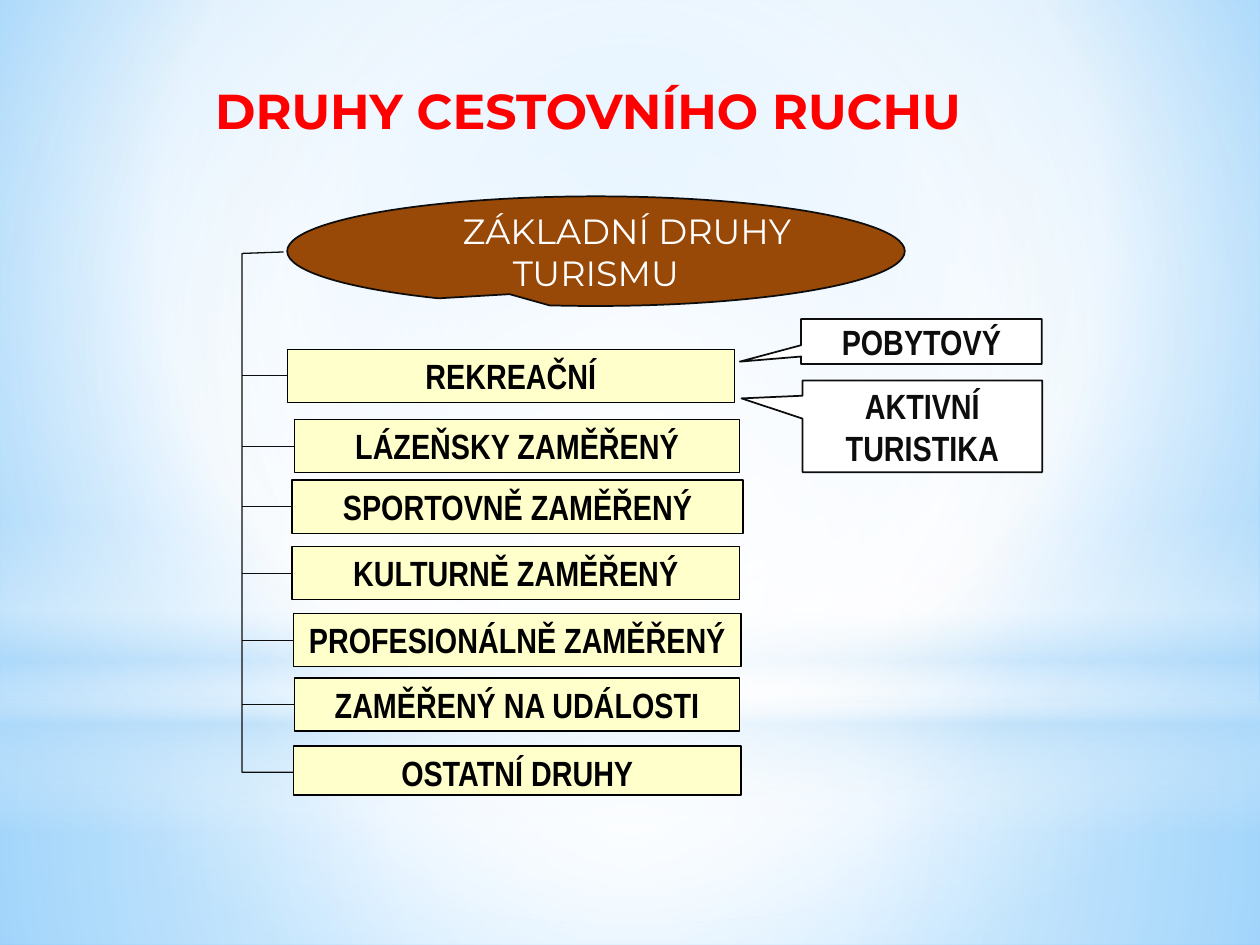
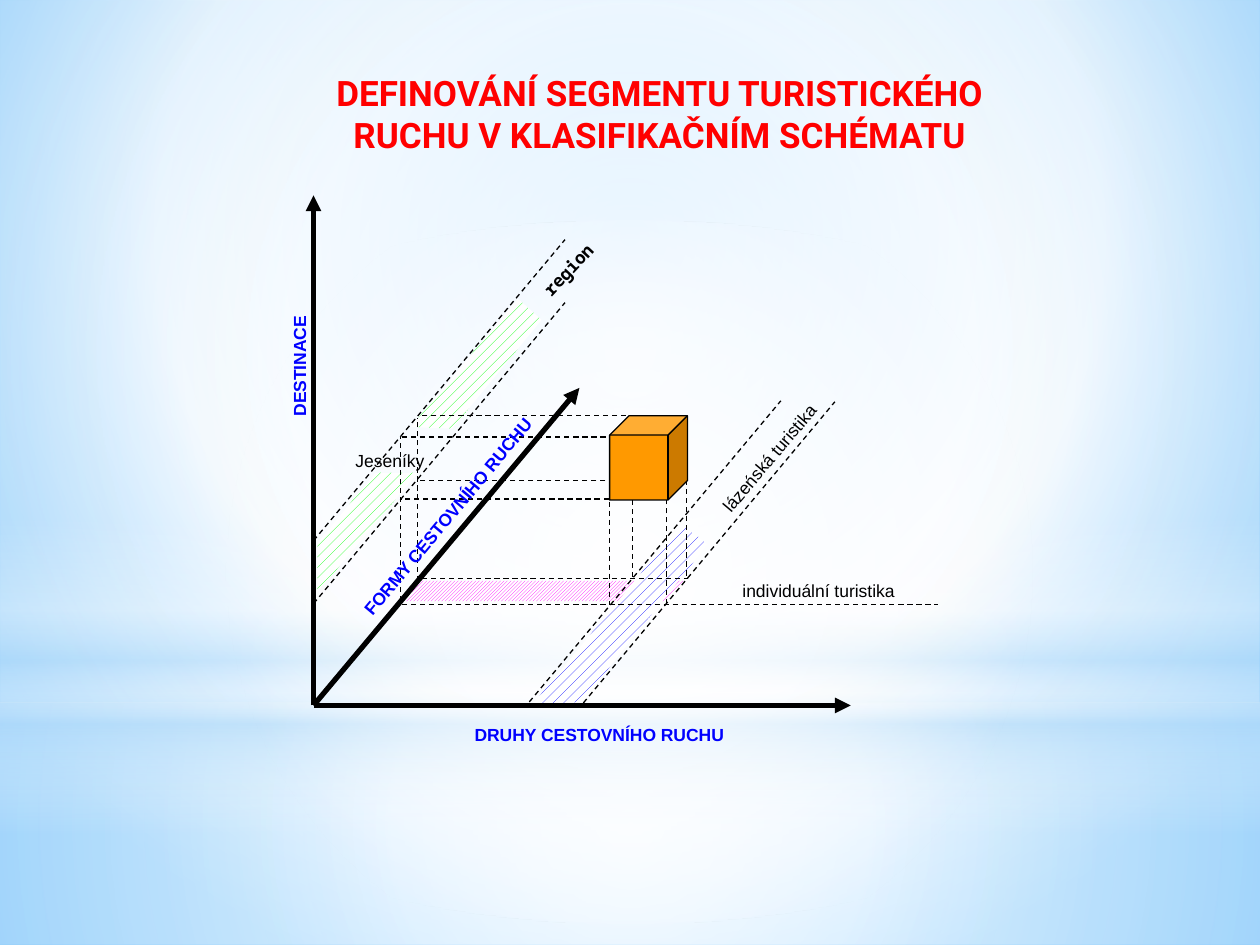
"""Two slides on the kinds and the segments of tourism."""
from dataclasses import dataclass

from lxml.etree import SubElement
from pptx import Presentation
from pptx.dml.color import RGBColor as Rgb
from pptx.enum.dml import MSO_LINE_DASH_STYLE as Dash, MSO_PATTERN_TYPE as Hatch
from pptx.enum.shapes import MSO_CONNECTOR as Link, MSO_SHAPE as Kind
from pptx.enum.text import MSO_ANCHOR as Anchor, PP_ALIGN as Align
from pptx.oxml.ns import qn
from pptx.util import Cm, Pt


@dataclass(frozen=True)
class Theme:
    wide: float = 25.4
    high: float = 19.05
    red: str = "FF0000"
    brown: str = "984807"
    cream: str = "FFFFCC"
    white: str = "FFFFFF"
    black: str = "000000"
    ink: str = "0D0D0D"
    blue: str = "0000FF"
    green: str = "00FF00"
    pink: str = "FF00FF"
    amber: str = "FF9900"
    sky: str = "B4DCFA"
    head: int = 28
    body: int = 20
    label: int = 10
    gap: int = 6
    thin: float = 0.75
    edge: float = 1
    thick: float = 3
    narrow: str = "Arial Narrow"
    plain: str = "Arial"
    mono: str = "Noto Sans Mono"
    title: str = "Montserrat"
    second: str = "Roboto"


T = Theme()
CENTRE = (50, 50, 50, 50)


def color(code):
    return Rgb.from_string(code)


def cms(*sizes):
    return [Cm(size) for size in sizes]


def blend(props, stops, focus=None):
    """Swap the solid fill in props for a gradient, radial if focus is given."""
    solid = props.find(qn("a:solidFill"))
    grad = props.makeelement(qn("a:gradFill"), {"rotWithShape": "1"})
    props.replace(solid, grad)
    group = SubElement(grad, qn("a:gsLst"))
    for place, code, alpha in stops:
        stop = SubElement(group, qn("a:gs"), pos=str(place * 1000))
        tint = SubElement(stop, qn("a:srgbClr"), val=code)
        if alpha < 100:
            SubElement(tint, qn("a:alpha"), val=str(alpha * 1000))
    if focus is None:
        SubElement(grad, qn("a:lin"), ang="5400000", scaled="0")
        return
    track = SubElement(grad, qn("a:path"), {"path": "circle"})
    sides = {side: str(part * 1000) for side, part in zip("ltrb", focus)}
    SubElement(track, qn("a:fillToRect"), sides)


def add_form(slide, kind, area, fill, line=None, width=T.thin, adjust=()):
    form = slide.shapes.add_shape(kind, *cms(*area))
    form.shadow.inherit = False
    form.fill.solid()
    form.fill.fore_color.rgb = color(fill)
    if line:
        form.line.color.rgb = color(line)
        form.line.width = Pt(width)
    else:
        form.line.fill.background()
    for index, value in enumerate(adjust):
        form.adjustments[index] = value
    return form


def add_text(form, runs, font, ink, bold=True, align=Align.CENTER, gap=0,
             pad=None, anchor=Anchor.TOP, wrap=True):
    """Write (words, size) runs into the one paragraph of a form."""
    frame = form.text_frame
    frame.word_wrap = wrap
    frame.vertical_anchor = anchor
    if pad:
        frame.margin_left = frame.margin_right = Cm(pad[0])
        frame.margin_top = frame.margin_bottom = Cm(pad[1])
    para = frame.paragraphs[0]
    para.alignment = align
    para.space_before = Pt(gap)
    for words, size in runs:
        run = para.add_run()
        run.text = words
        run.font.name = font
        run.font.size = Pt(size)
        run.font.bold = bold
        run.font.color.rgb = color(ink)
    return para


def add_title(slide, area, words, size, font, **style):
    box = slide.shapes.add_textbox(*cms(*area))
    add_text(box, [(words, size)], font, T.red, **style)


def add_label(slide, area, words, turn=0, ink=T.black, bold=False, font=T.plain):
    box = slide.shapes.add_textbox(*cms(*area))
    box.rotation = turn
    add_text(box, [(words, T.label)], font, ink, bold, wrap=False)


def add_line(slide, start, end, ink=T.black, width=T.thin, dash=False,
             arrow=False, target=None):
    """Draw a straight line, joined to the left side of target if given."""
    line = slide.shapes.add_connector(Link.STRAIGHT, *cms(*start, *end))
    if target is not None:
        line.end_connect(target, 1)
    line.line.color.rgb = color(ink)
    line.line.width = Pt(width)
    if dash:
        line.line.dash_style = Dash.DASH
    props = line._element.spPr
    if arrow:
        SubElement(props.find(qn("a:ln")), qn("a:tailEnd"), type="triangle")
    SubElement(props, qn("a:effectLst"))


def add_path(slide, points, close):
    spots = [tuple(cms(*point)) for point in points]
    pen = slide.shapes.build_freeform(*spots[0])
    pen.add_line_segments(spots[1:], close=close)
    form = pen.convert_to_shape()
    form.shadow.inherit = False
    return form


def add_hatch(slide, points, kind, ink):
    form = add_path(slide, points, True)
    form.fill.patterned()
    form.fill.pattern = kind
    form.fill.fore_color.rgb = color(ink)
    form.fill.back_color.rgb = color(T.white)
    form.line.fill.background()


def dress(master, slide):
    """Give the master its background and the soft bands, made on a slide."""
    fill = master.background.fill
    fill.solid()
    fill.fore_color.rgb = color(T.white)
    blend(master._element.find(".//" + qn("p:bgPr")),
          [(0, "9ED5FF", 100), (60, T.white, 100), (100, "5BB9FF", 100)],
          (20, 10, 20, 60))
    bands = [
        (Kind.RECTANGLE, 14.17, 4.88, CENTRE,
         [(0, T.white, 91), (37, T.white, 76), (100, T.sky, 79)]),
        (Kind.RECTANGLE, 0, 14.17, CENTRE,
         [(0, T.white, 89), (48, T.white, 62), (100, T.sky, 79)]),
        (Kind.RECTANGLE, 10.46, 6.35, None,
         [(0, T.white, 0), (29, T.white, 30), (45, T.sky, 40),
          (55, T.white, 26), (65, T.sky, 60), (100, T.white, 0)]),
        (Kind.OVAL, 4.45, 14.17, CENTRE, [(0, T.white, 100), (56, T.white, 0)]),
    ]
    for number, (kind, top, height, focus, stops) in enumerate(bands, 20):
        band = add_form(slide, kind, (0, top, T.wide, height), T.white)
        node = band._element
        blend(node.spPr, stops, focus)
        node.nvSpPr.cNvPr.set("id", str(number))
        master.shapes._spTree.append(node)


def draw_kinds(slide):
    """Draw the tree of the kinds of tourism."""
    add_title(slide, (4.09, 1.5, 16.54, 1.45), "DRUHY CESTOVNÍHO RUCHU",
              T.head, T.title, align=Align.LEFT, wrap=False)
    root = add_form(slide, Kind.OVAL_CALLOUT, (5.79, 3.96, 12.45, 2.21),
                    T.brown, T.ink, T.edge, (-0.14, 0.392))
    para = add_text(root, [("ZÁKLADNÍ DRUHY TURISMU", T.body)], T.title, T.white,
                    False, gap=T.gap, pad=(0, 0.13), anchor=Anchor.MIDDLE)
    para._p.get_or_add_pPr().set("indent", str(Cm(1.25)))

    trunk = add_path(slide, [(5.72, 5.08), (4.88, 5.11), (4.88, 15.57),
                             (5.92, 15.57)], False)
    trunk.fill.background()
    trunk.line.color.rgb = color(T.ink)
    trunk.line.width = Pt(T.thin)

    rows = [
        ("REKREAČNÍ", 5.79, 7.04, 9.02, 1.07),
        ("LÁZEŇSKY ZAMĚŘENÝ", 5.94, 8.46, 8.97, 1.07),
        ("SPORTOVNĚ ZAMĚŘENÝ", 5.89, 9.68, 9.09, 1.07),
        ("KULTURNĚ ZAMĚŘENÝ", 5.89, 11.02, 9.02, 1.07),
        ("PROFESIONÁLNĚ ZAMĚŘENÝ", 5.92, 12.37, 9.02, 1.07),
        ("ZAMĚŘENÝ NA UDÁLOSTI", 5.94, 13.67, 8.97, 1.07),
        ("OSTATNÍ DRUHY", 5.92, 15.04, 9.02, 0.99),
    ]
    for words, *area in rows:
        box = add_form(slide, Kind.RECTANGLE, area, T.cream, T.black)
        add_text(box, [(words, T.body)], T.narrow, T.black, gap=T.gap,
                 pad=(0.1, 0.1))
        if words != rows[-1][0]:
            left, top, _, height = area
            middle = top + height / 2
            add_line(slide, (4.88, middle), (left, middle), T.ink, target=box)

    notes = [
        ((16.15, 6.43, 4.85, 0.91), (-0.755, 0.447), [("POBYTOVÝ", T.body)]),
        ((16.18, 7.67, 4.83, 1.85), (-0.755, -0.304),
         [("AKTIVNÍ", T.body), (" ", T.label), ("TURISTIKA", T.body)]),
    ]
    for area, tip, runs in notes:
        note = add_form(slide, Kind.RECTANGULAR_CALLOUT, area, T.white, T.ink,
                        T.edge, tip)
        add_text(note, runs, T.narrow, T.ink, gap=T.gap, pad=(0.25, 0),
                 anchor=Anchor.MIDDLE)


def draw_scheme(slide):
    """Draw the three axes and the segment as a cube among them."""
    add_title(slide, (6.3, 1.32, 14, 1.96),
              "DEFINOVÁNÍ SEGMENTU TURISTICKÉHO RUCHU V KLASIFIKAČNÍM SCHÉMATU",
              T.body, T.second)
    zones = [
        (Hatch.DASHED_UPWARD_DIAGONAL, T.green,
         [(6.4, 10.95), (6.4, 11.94), (8.43, 9.53), (7.57, 9.53)]),
        (Hatch.LIGHT_UPWARD_DIAGONAL, T.pink,
         [(8.18, 12.12), (8.48, 11.71), (13.82, 11.71), (13.39, 12.12)]),
        (Hatch.PERCENT_20, T.blue,
         [(10.72, 14.22), (13.74, 10.57), (14.27, 10.97), (11.73, 14.15)]),
        (Hatch.DASHED_UPWARD_DIAGONAL, T.green,
         [(8.28, 8.61), (10.44, 6.02), (10.92, 6.45), (9.12, 8.64)]),
    ]
    for kind, ink, points in zones:
        add_hatch(slide, points, kind, ink)

    level = [(12.27, 8.08, 10.06), (13.84, 8.41, 9.68), (8.1, 18.9, 12.19),
             (8.51, 13.87, 11.66), (8.1, 12.22, 8.81), (12.62, 8.43, 8.38)]
    upright = [(8.08, 12.12, 8.81), (8.41, 11.71, 8.43), (12.29, 10.11, 12.19),
               (13.44, 12.17, 10.06), (13.84, 9.68, 11.63), (12.75, 11.63, 10.06)]
    slant = [(10.67, 14.15), (11.76, 14.17), (6.32, 12.17), (6.32, 10.9)]
    guides = [((x, y), (end, y)) for x, end, y in level]
    guides += [((x, y), (x, end)) for x, y, end in upright]
    guides += [((x, y), (x + 5.07, y - 6.07)) for x, y in slant]
    for start, end in guides:
        add_line(slide, start, end, dash=True)

    add_form(slide, Kind.CUBE, (12.29, 8.38, 1.57, 1.7), T.amber, T.black,
             adjust=(0.25,))
    for tip in [(6.32, 3.94), (17.15, 14.22), (11.68, 7.82)]:
        add_line(slide, (6.32, 14.22), tip, width=T.thick, arrow=True)

    add_label(slide, (13.46, 8.94, 3.89, 0.41), "lázeńská turistika", 310.3)
    add_label(slide, (14.38, 11.56, 4.24, 0.46), "individuální turistika")
    add_label(slide, (6.63, 8.94, 2.46, 0.58), "Jeseníky")
    add_label(slide, (10.18, 5.11, 2.5, 0.61), "region", 313.2, bold=True,
              font=T.mono)
    axes = [("DRUHY CESTOVNÍHO RUCHU", (8.64, 14.48, 6.88, 0.46), 0),
            ("FORMY CESTOVNÍHO RUCHU", (5.33, 10.11, 7.24, 0.48), 309.9),
            ("DESTINACE", (3.61, 7.19, 4.55, 0.38), 270)]
    for words, area, turn in axes:
        add_label(slide, area, words, turn, T.blue, True)


def main():
    deck = Presentation()
    deck.slide_width, deck.slide_height = cms(T.wide, T.high)
    blank = deck.slide_layouts[6]
    kinds, scheme = [deck.slides.add_slide(blank) for _ in range(2)]
    for slide in (kinds, scheme):
        for holder in list(slide.placeholders):
            holder._element.getparent().remove(holder._element)
    dress(deck.slide_master, kinds)
    draw_kinds(kinds)
    draw_scheme(scheme)
    deck.save("out.pptx")


if __name__ == "__main__":
    main()
